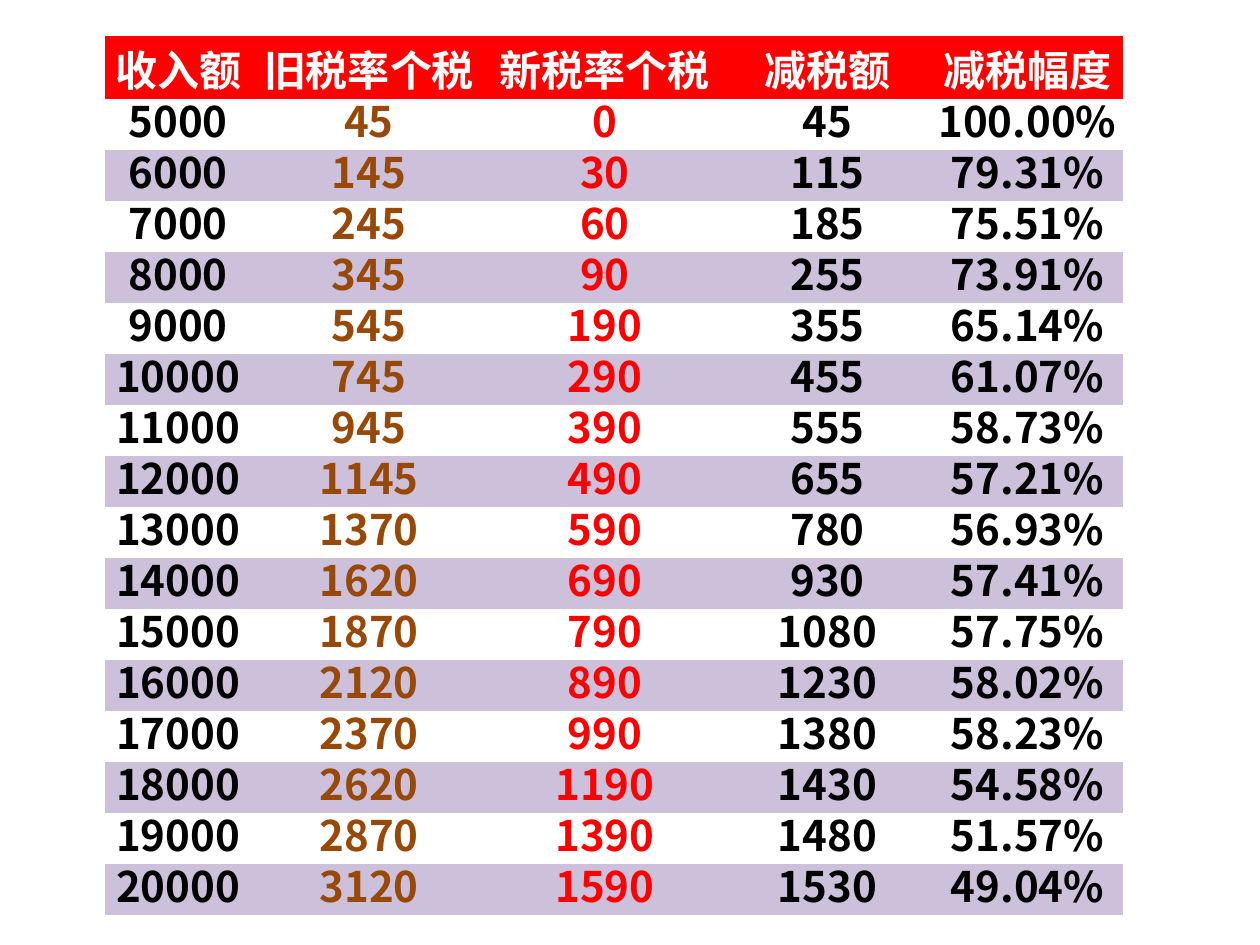
from lxml import etree
from pptx import Presentation
from pptx.dml.color import RGBColor
from pptx.enum.text import MSO_ANCHOR, PP_ALIGN
from pptx.oxml.ns import qn
from pptx.util import Inches, Pt

PX = Inches(1) / 126
BOTTOM = MSO_ANCHOR.BOTTOM
CENTER = PP_ALIGN.CENTER
WHITE = RGBColor(0xFF, 0xFF, 0xFF)
BLACK = RGBColor(0x00, 0x00, 0x00)
RED = RGBColor(0xFF, 0x00, 0x00)
BROWN = RGBColor(0x98, 0x48, 0x07)
LILAC = RGBColor(0xCC, 0xC0, 0xDA)
FONT = "Noto Sans CJK SC"
NO_STYLE = "{2D5ABB26-0587-4C30-8999-92F81FD0307C}"

HEADINGS = ["收入额", "旧税率个税", "新税率个税", "减税额", "减税幅度"]
OLD_TAX = [45, 145, 245, 345, 545, 745, 945, 1145,
           1370, 1620, 1870, 2120, 2370, 2620, 2870, 3120]
NEW_TAX = [0, 30, 60, 90, 190, 290, 390, 490,
           590, 690, 790, 890, 990, 1190, 1390, 1590]
COLUMN_COLORS = [BLACK, BROWN, RED, BLACK, BLACK]
COLUMN_WIDTHS = [146, 236, 236, 209, 191]
HEADER_HEIGHT = 63
ROW_HEIGHT = 51
CELL_FORMAT = {"margin_left": 0, "margin_right": 0, "margin_top": 0,
               "margin_bottom": 0, "vertical_anchor": BOTTOM}
FONT_FORMAT = {"name": FONT, "size": Pt(24), "bold": True}


def px(length):
    return round(length * PX)


rows = [HEADINGS]
for income, old, new in zip(range(5000, 21000, 1000), OLD_TAX, NEW_TAX):
    saving = old - new
    rows.append([str(income), str(old), str(new), str(saving), f"{saving / old:.2%}"])

deck = Presentation()
deck.slide_width = Inches(10)
deck.slide_height = Inches(7.5)
page = deck.slides.add_slide(deck.slide_layouts[6])

table_height = HEADER_HEIGHT + ROW_HEIGHT * len(OLD_TAX)
frame = page.shapes.add_table(len(rows), len(HEADINGS), px(105), px(36),
                              px(sum(COLUMN_WIDTHS)), px(table_height))
table = frame.table
table.first_row = False
table.horz_banding = False
for style in frame.element.iter(qn("a:tableStyleId")):
    style.text = NO_STYLE

for column, width in zip(table.columns, COLUMN_WIDTHS):
    column.width = px(width)

for r, texts in enumerate(rows):
    table.rows[r].height = px(ROW_HEIGHT if r else HEADER_HEIGHT)
    for c, text in enumerate(texts):
        cell = table.cell(r, c)
        for name, value in CELL_FORMAT.items():
            setattr(cell, name, value)
        if r % 2:
            cell.fill.background()
        else:
            cell.fill.solid()
            cell.fill.fore_color.rgb = LILAC if r else RED
        para = cell.text_frame.paragraphs[0]
        para.alignment = CENTER
        if r:
            para.line_spacing = Pt(29)
        span = para.add_run()
        span.text = text
        for name, value in FONT_FORMAT.items():
            setattr(span.font, name, value)
        span.font.color.rgb = COLUMN_COLORS[c] if r else WHITE
        latin = span.font._element.find(qn("a:latin"))
        east_asian = etree.Element(qn("a:ea"), typeface=FONT)
        latin.addnext(east_asian)

deck.save("out.pptx")
